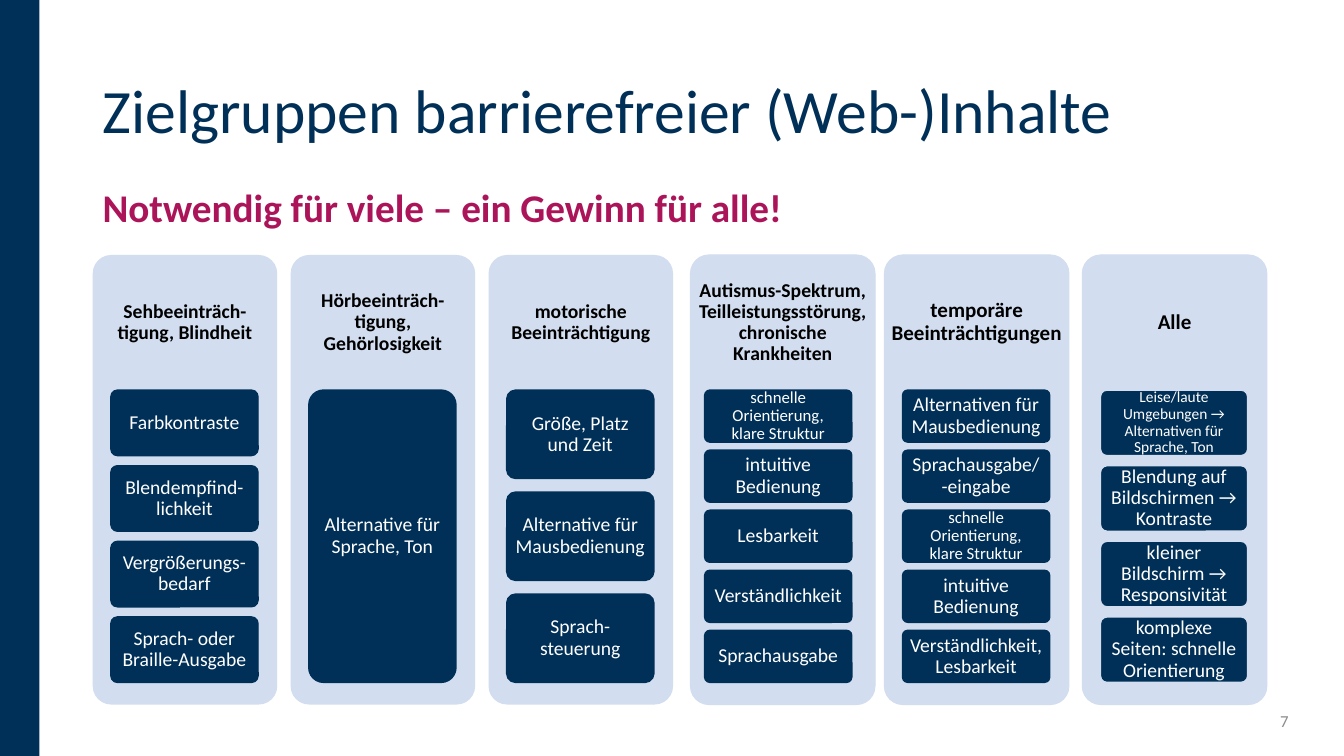
"""Build the slide on target groups of accessible web content."""
import copy
from dataclasses import dataclass
from typing import Optional

import pptx
import pptx.dml.color
import pptx.enum.shapes
import pptx.enum.text
import pptx.oxml.ns
import pptx.util

Inches = pptx.util.Inches
Pt = pptx.util.Pt
RGBColor = pptx.dml.color.RGBColor
Align = pptx.enum.text.PP_ALIGN
Anchor = pptx.enum.text.MSO_ANCHOR
Preset = pptx.enum.shapes.MSO_SHAPE

NAVY = RGBColor(0x00, 0x30, 0x57)
MAGENTA = RGBColor(0xAC, 0x14, 0x5A)
PALE_BLUE = RGBColor(0xD2, 0xDE, 0xEF)
BLACK = RGBColor(0x00, 0x00, 0x00)
WHITE = RGBColor(0xFF, 0xFF, 0xFF)
GREY = RGBColor(0x8C, 0x8C, 0x8C)

COLUMN_LEFT, COLUMN_STEP = 0.92, 1.963
PANEL_TOP, PANEL_WIDTH, PANEL_HEIGHT = 2.53, 1.83, 4.46
HEADER_HEIGHT = 1.34
CARD_INDENT, CARD_WIDTH = 0.18, 1.46
CARDS_TOP, CARDS_HEIGHT = 3.87, 2.9
GAP_RATIO = 0.154


@dataclass
class Card:
    text: str
    size: int = 14


@dataclass
class Column:
    header: str
    cards: list[Card]
    header_size: int = 14
    panel_shift: float = 0
    panel_line: Optional[RGBColor] = None
    card_line: RGBColor = NAVY


QUICK_ORIENTATION = Card("schnelle Orientierung,\nklare Struktur", 12)
COLUMNS = [
    Column("Sehbeeinträch-tigung, Blindheit", [
        Card("Farbkontraste"),
        Card("Blendempfind-\nlichkeit"),
        Card("Vergrößerungs-bedarf"),
        Card("Sprach- oder Braille-Ausgabe"),
    ]),
    Column("Hörbeeinträch-tigung, Gehörlosigkeit", [
        Card("Alternative für Sprache, Ton"),
    ]),
    Column("motorische Beeinträchtigung", [
        Card("Größe, Platz\nund Zeit"),
        Card("Alternative für Mausbedienung"),
        Card("Sprach-steuerung"),
    ]),
    Column("Autismus-Spektrum, Teilleistungsstörung, chronische Krankheiten", [
        QUICK_ORIENTATION,
        Card("intuitive Bedienung"),
        Card("Lesbarkeit"),
        Card("Verständlichkeit"),
        Card("Sprachausgabe"),
    ], panel_shift=0.04, panel_line=PALE_BLUE),
    Column("temporäre Beeinträchtigungen", [
        Card("Alternativen für Mausbedienung"),
        Card("Sprachausgabe/\n-eingabe"),
        QUICK_ORIENTATION,
        Card("intuitive Bedienung"),
        Card("Verständlichkeit, Lesbarkeit"),
    ], header_size=15, panel_line=PALE_BLUE),
    Column("Alle", [
        Card("Leise/laute\nUmgebungen → Alternativen für Sprache, Ton", 11),
        Card("Blendung auf Bildschirmen → Kontraste"),
        Card("kleiner Bildschirm → Responsivität"),
        Card("komplexe Seiten: schnelle Orientierung"),
    ], header_size=15, panel_line=PALE_BLUE, card_line=PALE_BLUE),
]


def write(box, text: str, *, size: float, color: RGBColor, bold: bool = False,
          align=Align.CENTER, anchor=Anchor.MIDDLE, spacing: float = 0.9,
          before: float = 0, insets: tuple[float, float] = (0.1, 0.05)) -> None:
    frame = box.text_frame
    frame.word_wrap = True
    frame.auto_size = pptx.enum.text.MSO_AUTO_SIZE.NONE
    frame.vertical_anchor = anchor
    frame.margin_left = frame.margin_right = Inches(insets[0])
    frame.margin_top = frame.margin_bottom = Inches(insets[1])
    para = frame.paragraphs[0]
    para.text = text
    para.alignment = align
    para.line_spacing = spacing
    para.space_before = Pt(before)
    for span in para.runs:
        span.font.name = "Calibri"
        span.font.size = Pt(size)
        span.font.bold = bold
        span.font.color.rgb = color
    for line_break in para._p.findall(pptx.oxml.ns.qn("a:br")):
        line_break.append(copy.deepcopy(para.runs[0]._r.rPr))


def add_text(page, text: str, left: float, top: float, width: float,
             height: float, **text_format) -> None:
    box = page.shapes.add_textbox(Inches(left), Inches(top), Inches(width), Inches(height))
    write(box, text, **text_format)


def add_block(page, preset, left: float, top: float, width: float, height: float,
              fill: RGBColor, line: Optional[RGBColor] = None, line_width: float = 1):
    box = page.shapes.add_shape(preset, Inches(left), Inches(top), Inches(width), Inches(height))
    box.shadow.inherit = False
    box.fill.solid()
    box.fill.fore_color.rgb = fill
    if line is None:
        box.line.fill.background()
    else:
        box.line.color.rgb = line
        box.line.width = Pt(line_width)
    if preset == Preset.ROUNDED_RECTANGLE:
        box.adjustments[0] = 0.1
    return box


def add_column(page, column: Column, left: float) -> None:
    panel_left = left + column.panel_shift
    add_block(page, Preset.ROUNDED_RECTANGLE, panel_left, PANEL_TOP, PANEL_WIDTH,
              PANEL_HEIGHT, PALE_BLUE, column.panel_line, 0.75)
    add_text(page, column.header, panel_left, PANEL_TOP, PANEL_WIDTH, HEADER_HEIGHT,
             size=column.header_size, color=BLACK, bold=True, insets=(0.06, 0.06))
    count = len(column.cards)
    height = CARDS_HEIGHT / (count + GAP_RATIO * (count - 1))
    for row, card in enumerate(column.cards):
        top = CARDS_TOP + row * height * (1 + GAP_RATIO)
        box = add_block(page, Preset.ROUNDED_RECTANGLE, left + CARD_INDENT, top,
                        CARD_WIDTH, height, NAVY, column.card_line)
        write(box, card.text, size=card.size, color=WHITE, insets=(0.04, 0.03))


def main() -> None:
    deck = pptx.Presentation()
    deck.slide_width, deck.slide_height = Inches(13.33), Inches(7.5)
    page = deck.slides.add_slide(deck.slide_layouts.get_by_name("Title Only"))
    add_block(page, Preset.RECTANGLE, 0, 0, 0.39, 7.5, NAVY)

    title = page.shapes.title
    title.left, title.top = Inches(0.92), Inches(0.4)
    title.width, title.height = Inches(11.97), Inches(1.45)
    write(title, "Zielgruppen barrierefreier (Web-)Inhalte", size=44, color=NAVY,
          align=Align.LEFT)
    add_text(page, "Notwendig für viele – ein Gewinn für alle!", 0.92, 1.82, 11.97, 0.56,
             size=28, color=MAGENTA, bold=True, align=Align.LEFT, anchor=Anchor.TOP,
             before=10)

    for index, column in enumerate(COLUMNS):
        add_column(page, column, COLUMN_LEFT + index * COLUMN_STEP)
    add_text(page, "7", 9.88, 6.95, 3, 0.4, size=12, color=GREY, align=Align.RIGHT,
             spacing=1)
    deck.save("out.pptx")


if __name__ == "__main__":
    main()
